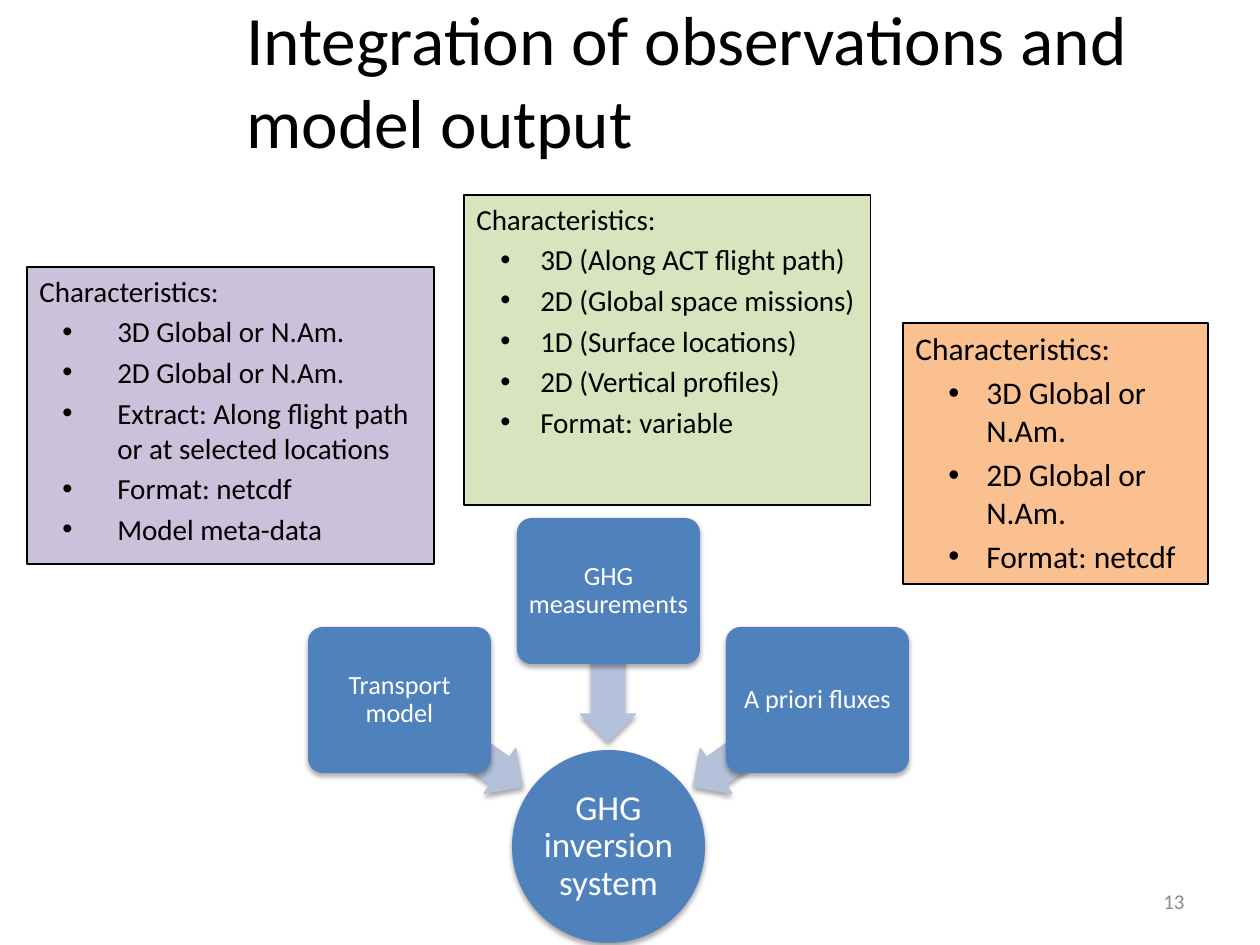
from lxml import etree
from pptx import Presentation, util as u
from pptx.dml.color import RGBColor
from pptx.enum import shapes, text
from pptx.oxml.ns import qn

PX = 914400 // 126
BLUE, PALE, WHITE, BLACK, GREY = "4F81BD", "B3C1DB", "FFFFFF", "000000", "8C8C8C"
SHAPE, ANCHOR, ALIGN = shapes.MSO_SHAPE, text.MSO_ANCHOR, text.PP_ALIGN

TITLE = "Integration of observations and model output"
HEADING = "Characteristics:"
# box, fill, font size, (left margin, hanging indent), bullets
PANELS = [
    ((903, 323, 305, 261), "FAC090", 18, (71, 38),
     ["3D Global or N.Am.", "2D Global or N.Am.", "Format: netcdf"]),
    ((464, 195, 407, 310), "D7E4BD", 16.6, (64, 40),
     ["3D (Along ACT flight path)", "2D (Global space missions)",
      "1D (Surface locations)", "2D (Vertical profiles)", "Format: variable"]),
    ((27, 267, 407, 297), "CCC1DA", 16.6, (78, 55),
     ["3D Global or N.Am.", "2D Global or N.Am.",
      "Extract: Along flight path or at selected locations",
      "Format: netcdf", "Model meta-data"]),
]
HUB = "GHG inversion system"
HUB_BOX = (512, 750, 193, 193)
# label, top of node, top of arrow, arrow rotation
INPUTS = [("Transport model", 627, 716, 215),
          ("GHG measurements", 518, 639, 270),
          ("A priori fluxes", 627, 716, 325)]
NODE_LEFT, NODE_STEP, NODE_W, NODE_H = 308, 209, 183, 146
ARROW_LEFT, ARROW_STEP, ARROW_W, ARROW_H = 386, 147, 150, 55


def px(n):
    return u.Emu(n * PX)


def rgb(value):
    return RGBColor.from_string(value)


def add_shadow(sp):
    effects = etree.SubElement(sp._element.spPr, qn("a:effectLst"))
    shadow = etree.SubElement(effects, qn("a:outerShdw"), blurRad=str(u.Pt(3.1)),
                              dist=str(u.Pt(1.8)), dir="5400000", rotWithShape="0")
    color = etree.SubElement(shadow, qn("a:srgbClr"), val=BLACK)
    etree.SubElement(color, qn("a:alpha"), val="35000")


def add_shape(s, kind, box, fill, line=None, adjustments=(), shadow=True):
    sp = s.shapes.add_shape(kind, *map(px, box))
    for i, value in enumerate(adjustments):
        sp.adjustments[i] = value
    sp.fill.solid()
    sp.fill.fore_color.rgb = rgb(fill)
    if line:
        sp.line.color.rgb = rgb(line)
        sp.line.width = u.Pt(0.75)
    else:
        sp.line.fill.background()
    if shadow:
        add_shadow(sp)
    else:
        sp.shadow.inherit = False
    return sp


def write(p, words, size, color, **paragraph_format):
    for name, value in paragraph_format.items():
        setattr(p, name, value)
    r = p.add_run()
    r.text = words
    for name, value in {"name": "Calibri", "size": u.Pt(size)}.items():
        setattr(r.font, name, value)
    r.font.color.rgb = rgb(color)


def set_frame(sp, **frame_format):
    tf = sp.text_frame
    for name, value in {"word_wrap": True, **frame_format}.items():
        setattr(tf, name, value)
    return tf


def add_label(sp, words, size, inset):
    sides = ("left", "top", "right", "bottom")
    margins = {f"margin_{side}": px(inset) for side in sides}
    tf = set_frame(sp, vertical_anchor=ANCHOR.MIDDLE, **margins)
    write(tf.paragraphs[0], words, size, WHITE, alignment=ALIGN.CENTER, line_spacing=0.9)


def add_text(s, box, words, size, color, align, **frame_format):
    sp = s.shapes.add_textbox(*map(px, box))
    tf = set_frame(sp, **frame_format)
    write(tf.paragraphs[0], words, size, color, alignment=align)


def add_bullet(p, margin, hanging):
    pPr = p._p.get_or_add_pPr()
    pPr.set("marL", str(px(margin)))
    pPr.set("indent", str(-px(hanging)))
    etree.SubElement(pPr, qn("a:buFont"), typeface="Arial")
    etree.SubElement(pPr, qn("a:buChar"), char="•")


def add_panel(s, box, fill, size, indent, bullets):
    sp = add_shape(s, SHAPE.RECTANGLE, box, fill, BLACK, shadow=False)
    tf = set_frame(sp, vertical_anchor=ANCHOR.TOP)
    write(tf.paragraphs[0], HEADING, size, BLACK, alignment=ALIGN.LEFT)
    for words in bullets:
        p = tf.add_paragraph()
        add_bullet(p, *indent)
        write(p, words, size, BLACK, alignment=ALIGN.LEFT, space_before=u.Pt(size * 0.2))


def add_diagram(s):
    hub = add_shape(s, SHAPE.OVAL, HUB_BOX, BLUE)
    add_label(hub, HUB, 20, 1)
    for i, (label, node_top, arrow_top, angle) in enumerate(INPUTS):
        arrow_box = (ARROW_LEFT + i * ARROW_STEP, arrow_top, ARROW_W, ARROW_H)
        arrow = add_shape(s, SHAPE.LEFT_ARROW, arrow_box, PALE, PALE, (0.6, 0.5))
        arrow.rotation = angle
        node_box = (NODE_LEFT + i * NODE_STEP, node_top, NODE_W, NODE_H)
        node = add_shape(s, SHAPE.ROUNDED_RECTANGLE, node_box, BLUE, adjustments=(0.1,))
        add_label(node, label, 15, 4)


def main():
    prs = Presentation()
    prs.slide_width, prs.slide_height = u.Inches(10), u.Inches(7.5)
    s = prs.slides.add_slide(prs.slide_layouts[6])
    add_text(s, (234, 38, 1026, 158), TITLE, 39.6, BLACK, ALIGN.LEFT,
             vertical_anchor=ANCHOR.BOTTOM, margin_bottom=px(34))
    add_text(s, (903, 876, 294, 50), "13", 12, GREY, ALIGN.RIGHT,
             vertical_anchor=ANCHOR.MIDDLE)
    add_diagram(s)
    for panel in PANELS:
        add_panel(s, *panel)
    prs.save("out.pptx")


if __name__ == "__main__":
    main()
